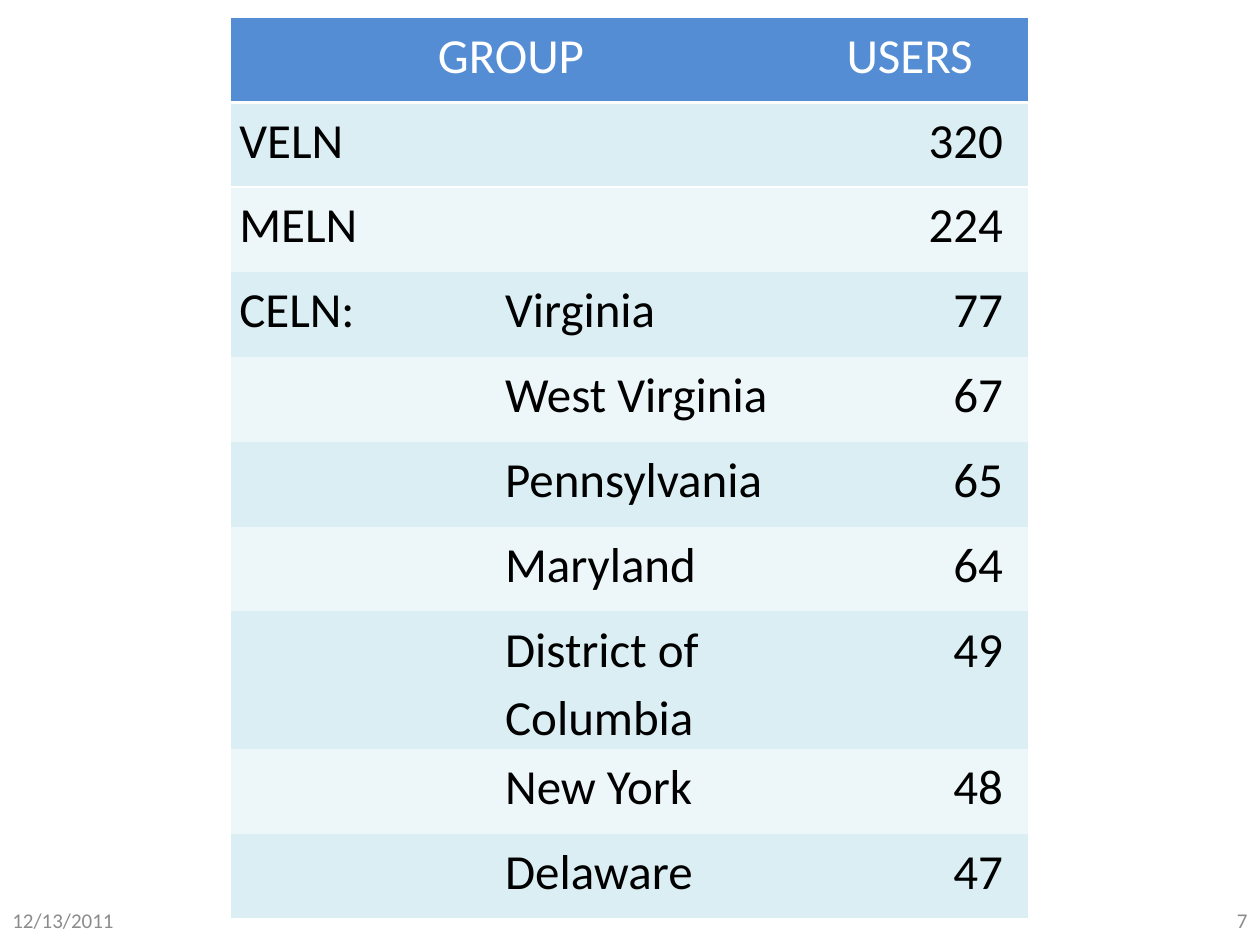
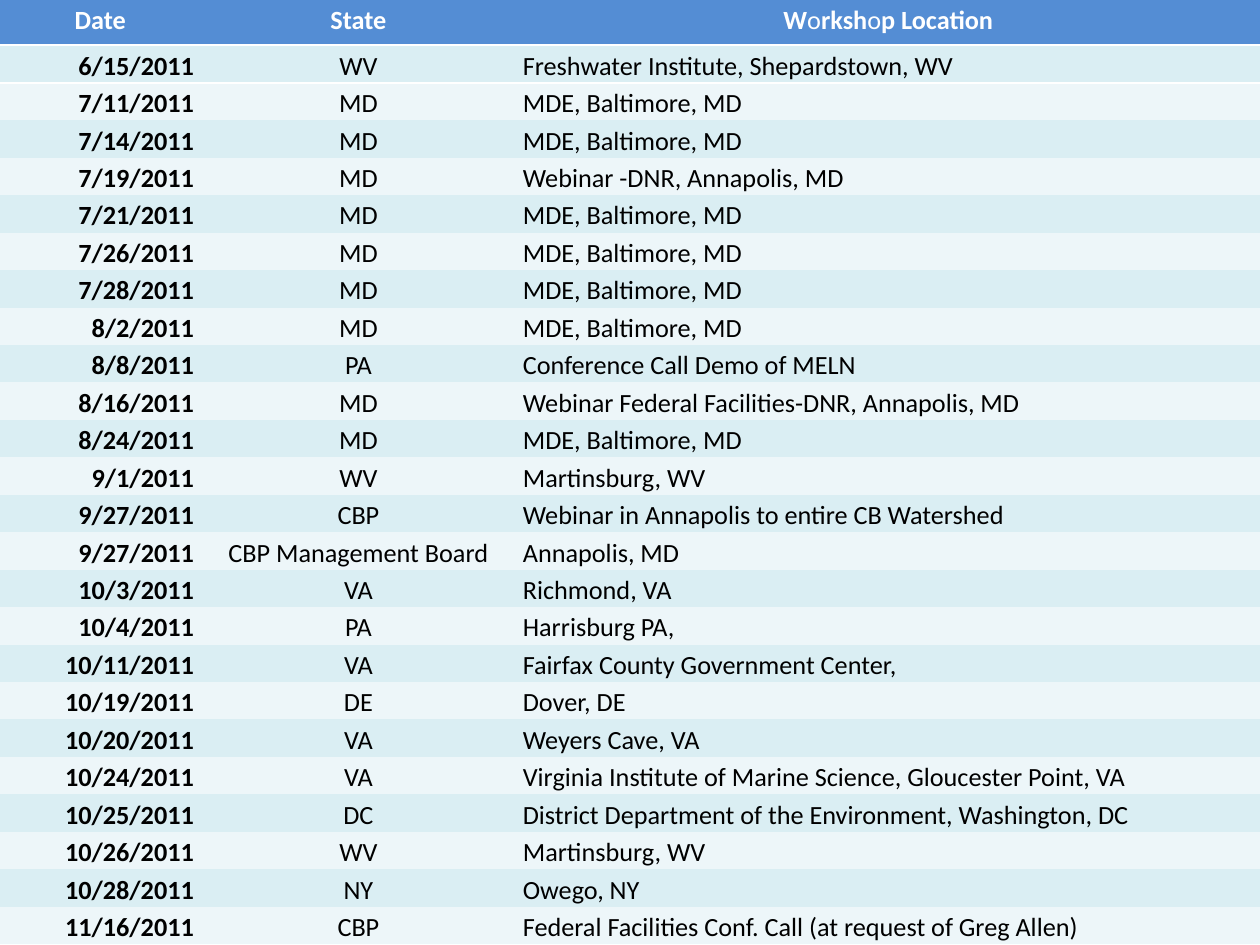
from dataclasses import dataclass

from lxml.etree import SubElement
from pptx import Presentation
from pptx.dml.color import RGBColor
from pptx.enum.text import MSO_ANCHOR, PP_ALIGN
from pptx.oxml import parse_xml
from pptx.oxml.ns import nsdecls, qn
from pptx.util import Inches, Pt


@dataclass(frozen=True)
class Theme:
    font: str = "Calibri"
    header_fill: str = "548DD4"
    bands: tuple = ("DAEEF3", "EDF6F9")
    white: str = "FFFFFF"
    black: str = "000000"
    gray: str = "8C8C8C"
    users_size: float = 28
    workshop_size: float = 15
    footer_size: float = 12
    line_spacing: float = 1.15
    rule_width: float = 1.5


THEME = Theme()
NO_TABLE_STYLE = "{2D5ABB26-0587-4C30-8999-92F81FD0307C}"
LEFT, CENTER, RIGHT = PP_ALIGN.LEFT, PP_ALIGN.CENTER, PP_ALIGN.RIGHT
SLIDE_WIDTH, SLIDE_HEIGHT = 10, 7.5

# Group and user counts; None joins the cell to the one on its left
USERS = [
    ("GROUP", None, "USERS"),
    ("VELN", None, "320"),
    ("MELN", None, "224"),
    ("CELN:", "Virginia", "77"),
    ("", "West Virginia", "67"),
    ("", "Pennsylvania", "65"),
    ("", "Maryland", "64"),
    ("", "District of Columbia", "49"),
    ("", "New York", "48"),
    ("", "Delaware", "47"),
]

# The header of the last column mixes bold and regular letters
LOCATION_HEADER = [("W", True), ("o", False), ("rksh", True), ("o", False),
                   ("p Location", True)]
MDE = "MDE, Baltimore, MD"
WORKSHOPS = [
    ("Date", "State", LOCATION_HEADER),
    ("6/15/2011", "WV", "Freshwater Institute, Shepardstown, WV"),
    ("7/11/2011", "MD", MDE),
    ("7/14/2011", "MD", MDE),
    ("7/19/2011", "MD", "Webinar -DNR, Annapolis, MD"),
    ("7/21/2011", "MD", MDE),
    ("7/26/2011", "MD", MDE),
    ("7/28/2011", "MD", MDE),
    ("8/2/2011", "MD", MDE),
    ("8/8/2011", "PA", "Conference Call Demo of MELN"),
    ("8/16/2011", "MD", "Webinar Federal Facilities-DNR, Annapolis, MD"),
    ("8/24/2011", "MD", MDE),
    ("9/1/2011", "WV", "Martinsburg, WV"),
    ("9/27/2011", "CBP", "Webinar in Annapolis to entire CB Watershed"),
    ("9/27/2011", "CBP Management Board", "Annapolis, MD"),
    ("10/3/2011", "VA", "Richmond, VA"),
    ("10/4/2011", "PA", "Harrisburg PA,"),
    ("10/11/2011", "VA", "Fairfax County Government Center,"),
    ("10/19/2011", "DE", "Dover, DE"),
    ("10/20/2011", "VA", "Weyers Cave, VA"),
    ("10/24/2011", "VA", "Virginia Institute of Marine Science, Gloucester Point, VA"),
    ("10/25/2011", "DC", "District Department of the Environment, Washington, DC"),
    ("10/26/2011", "WV", "Martinsburg, WV"),
    ("10/28/2011", "NY", "Owego, NY"),
    ("11/16/2011", "CBP", "Federal Facilities Conf. Call (at request of Greg Allen)"),
]


def write_text(paragraph, text, *, size, color, bold=False, align=LEFT, spacing=1.0):
    """Write a string, or a list of (string, bold) pairs, into a paragraph."""
    paragraph.alignment = align
    paragraph.line_spacing = spacing
    pieces = [(text, bold)] if isinstance(text, str) else text
    for piece, piece_bold in pieces:
        run = paragraph.add_run()
        run.text = piece
        run.font.name = THEME.font
        run.font.size = Pt(size)
        run.font.bold = piece_bold
        run.font.color.rgb = RGBColor.from_string(color)


def add_footer(slide, text, left, align):
    box = slide.shapes.add_textbox(Inches(left), Inches(7.1), Inches(2.33), Inches(0.4))
    frame = box.text_frame
    frame.word_wrap = True
    frame.vertical_anchor = MSO_ANCHOR.MIDDLE
    write_text(frame.paragraphs[0], text, size=THEME.footer_size,
               color=THEME.gray, align=align)


def add_border(cell, side):
    """Put a white rule on one side: lnT for the top, lnB for the bottom."""
    line = parse_xml(f'<a:{side} {nsdecls("a")} w="{Pt(THEME.rule_width)}"/>')
    fill = SubElement(line, qn("a:solidFill"))
    SubElement(fill, qn("a:srgbClr"), val=THEME.white)
    cell._tc.get_or_add_tcPr().insert(0, line)


def format_cell(cell, row_index, margins):
    cell.margin_left, cell.margin_right = (Inches(margin) for margin in margins)
    cell.margin_top = cell.margin_bottom = 0
    color = THEME.bands[(row_index - 1) % 2] if row_index else THEME.header_fill
    cell.fill.solid()
    cell.fill.fore_color.rgb = RGBColor.from_string(color)
    if row_index < 2:
        add_border(cell, "lnT" if row_index else "lnB")


def add_banded_table(slide, rows, *, left, top, widths, heights, size, aligns,
                     margins, header_bold=False, bold_columns=()):
    frame = slide.shapes.add_table(len(rows), len(widths), Inches(left), Inches(top),
                                   Inches(sum(widths)), Inches(sum(heights)))
    table = frame.table
    table._tbl.tblPr.find(qn("a:tableStyleId")).text = NO_TABLE_STYLE
    for column, width in zip(table.columns, widths):
        column.width = Inches(width)
    for row, height in zip(table.rows, heights):
        row.height = Inches(height)

    for row_index, values in enumerate(rows):
        is_header = row_index == 0
        for column_index, value in enumerate(values):
            cell = table.cell(row_index, column_index)
            # Header cells share the margins of the first column
            format_cell(cell, row_index, margins[0 if is_header else column_index])
            if value is None:
                table.cell(row_index, column_index - 1).merge(cell)
            elif value:
                write_text(cell.text_frame.paragraphs[0], value, size=size,
                           color=THEME.white if is_header else THEME.black,
                           bold=header_bold if is_header else column_index in bold_columns,
                           align=CENTER if is_header else aligns[column_index],
                           spacing=THEME.line_spacing)


def add_users_slide(presentation):
    slide = presentation.slides.add_slide(presentation.slide_layouts[6])
    add_footer(slide, "12/13/2011", 0, LEFT)
    add_footer(slide, "7", 7.67, RIGHT)
    # One row holds two lines; the others share the remaining height
    table_height, tall_row = 7.15, 1.09
    heights = [(table_height - tall_row) / (len(USERS) - 1)] * len(USERS)
    heights[7] = tall_row
    add_banded_table(slide, USERS, left=1.83, top=0.14, widths=(2.11, 2.34, 1.88),
                     heights=heights, size=THEME.users_size,
                     aligns=(LEFT, LEFT, RIGHT),
                     margins=((0.07, 0.07), (0.07, 0.07), (0.08, 0.2)))


def add_workshops_slide(presentation):
    slide = presentation.slides.add_slide(presentation.slide_layouts[6])
    header_height = 0.36
    body_count = len(WORKSHOPS) - 1
    body_height = (SLIDE_HEIGHT - header_height) / body_count
    add_banded_table(slide, WORKSHOPS, left=0, top=0, widths=(1.59, 2.51, 5.9),
                     heights=[header_height] + [body_height] * body_count,
                     size=THEME.workshop_size, aligns=(RIGHT, CENTER, LEFT),
                     margins=((0.05, 0.05),) * 3, header_bold=True, bold_columns=(0,))


def main():
    presentation = Presentation()
    presentation.slide_width = Inches(SLIDE_WIDTH)
    presentation.slide_height = Inches(SLIDE_HEIGHT)
    add_users_slide(presentation)
    add_workshops_slide(presentation)
    presentation.save("out.pptx")


if __name__ == "__main__":
    main()
